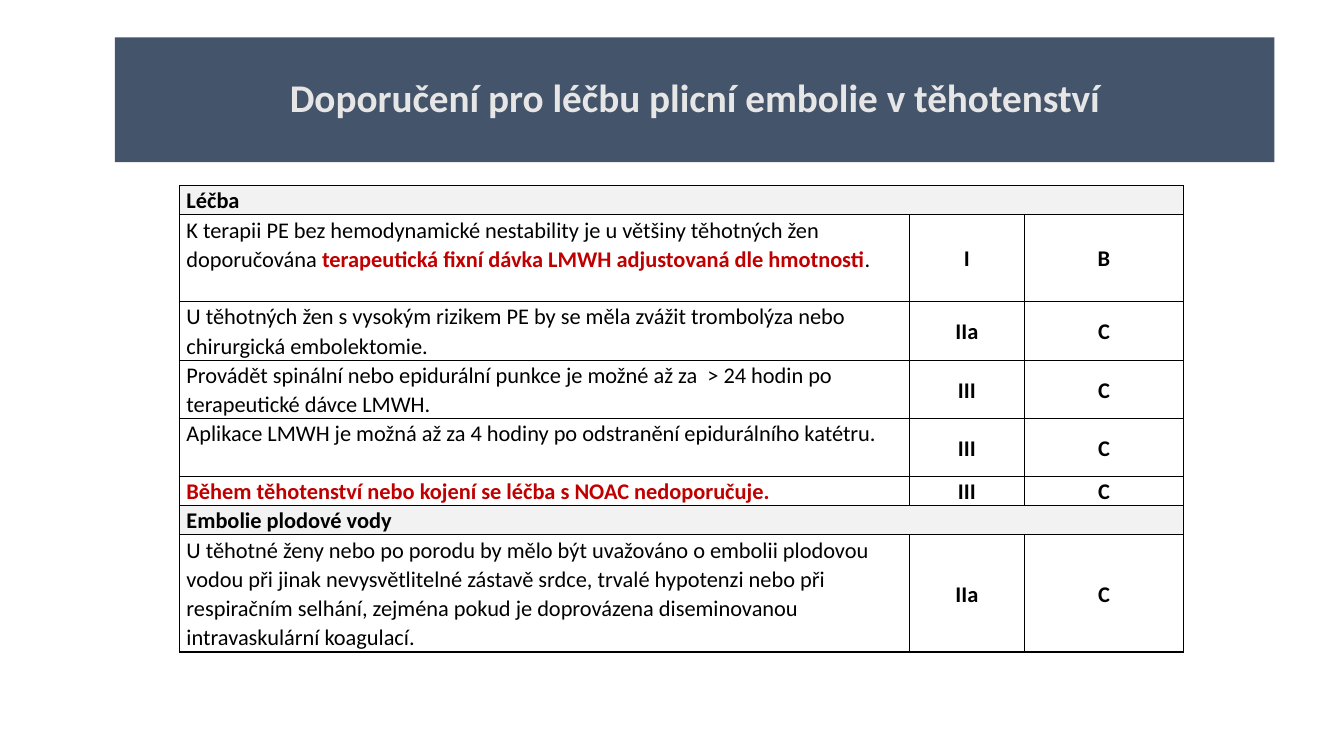
from lxml import etree
from pptx import Presentation
from pptx import util as u
from pptx.dml.color import RGBColor
from pptx.enum import shapes, text
from pptx.oxml import ns

PX = 9144
COLORS = {"banner": "44546A", "title": "E7E6E6", "ink": "000000",
          "accent": "C00000", "section": "F2F2F2"}
COLUMN_WIDTHS = [724, 114, 158]
ROWS = [
    (28, [("Léčba", "ink", True)]),
    (86, [("K terapii PE bez hemodynamické nestability je u většiny těhotných žen doporučována ", "ink", False),
          ("terapeutická fixní dávka LMWH adjustovaná dle hmotnosti", "accent", True),
          (".", "ink", False)], "I", "B"),
    (57, [("U těhotných žen s vysokým rizikem PE by se měla zvážit trombolýza nebo "
           "chirurgická embolektomie.", "ink", False)], "IIa", "C"),
    (57, [("Provádět spinální nebo epidurální punkce je možné až za  > 24 hodin po "
           "terapeutické dávce LMWH.", "ink", False)], "III", "C"),
    (57, [("Aplikace LMWH je možná až za 4 hodiny po odstranění epidurálního katétru.", "ink", False)],
     "III", "C"),
    (28, [("Během těhotenství nebo kojení se léčba s NOAC nedoporučuje.", "accent", True)], "III", "C"),
    (28, [("Embolie plodové vody", "ink", True)]),
    (115, [("U těhotné ženy nebo po porodu by mělo být uvažováno o embolii plodovou vodou při jinak "
            "nevysvětlitelné zástavě srdce, trvalé hypotenzi nebo při respiračním selhání, zejména "
            "pokud je doprovázena diseminovanou intravaskulární koagulací.", "ink", False)], "IIa", "C"),
]


def px(length):
    """Turn whole pixels into EMU."""
    return u.Emu(length * PX)


def paint(fill, color):
    """Apply a solid colour to a fill."""
    fill.solid()
    fill.fore_color.rgb = RGBColor.from_string(COLORS[color])


def write(frame, wording, size=16, color="ink", bold=True, align=text.PP_ALIGN.LEFT, spacing=1.07):
    """Write a string, or a list of (words, colour, bold) parts, as one paragraph."""
    frame.word_wrap = True
    paragraph = frame.paragraphs[0]
    paragraph.alignment = align
    paragraph.line_spacing = spacing
    parts = [(wording, color, bold)] if isinstance(wording, str) else wording
    for words, ink, weight in parts:
        run = paragraph.add_run()
        run.text = words
        run.font.name = "Calibri"
        run.font.size = u.Pt(size)
        run.font.bold = weight
        run.font.color.rgb = RGBColor.from_string(COLORS[ink])


def add_banner(slide, wording):
    """Add the title band."""
    banner = slide.shapes.add_shape(shapes.MSO_SHAPE.RECTANGLE, px(114), px(37), px(1150), px(124))
    banner.shadow.inherit = False
    paint(banner.fill, "banner")
    banner.line.fill.background()
    banner.text_frame.vertical_anchor = text.MSO_ANCHOR.MIDDLE
    write(banner.text_frame, wording, size=28, color="title", align=text.PP_ALIGN.CENTER, spacing=0.9)


def outline(cell):
    """Draw a thin border on all four sides of a cell."""
    properties = cell._tc.get_or_add_tcPr()
    for side in ("a:lnL", "a:lnR", "a:lnT", "a:lnB"):
        border = etree.SubElement(properties, ns.qn(side), w=str(u.Pt(1)))
        solid = etree.SubElement(border, ns.qn("a:solidFill"))
        etree.SubElement(solid, ns.qn("a:srgbClr"), val=COLORS["ink"])


def format_cell(cell, section):
    """Set the margins, border and fill of a cell."""
    cell.margin_left = cell.margin_right = px(7)
    cell.margin_top = cell.margin_bottom = 0
    outline(cell)
    if section:
        paint(cell.fill, "section")
    else:
        cell.fill.background()


def add_recommendations(slide):
    """Add the table of recommendations with class and level."""
    heights = [row[0] for row in ROWS]
    table = slide.shapes.add_table(len(ROWS), len(COLUMN_WIDTHS), px(178), px(184),
                                   px(sum(COLUMN_WIDTHS)), px(sum(heights))).table
    table.first_row = table.horz_banding = False
    for column, width in zip(table.columns, COLUMN_WIDTHS):
        column.width = px(width)
    for index, (height, advice, *grades) in enumerate(ROWS):
        table.rows[index].height = px(height)
        cells = list(table.rows[index].cells)
        for cell in cells:
            format_cell(cell, section=not grades)
        if not grades:
            cells[0].merge(cells[-1])
        write(cells[0].text_frame, advice)
        for cell, grade in zip(cells[1:], grades):
            cell.vertical_anchor = text.MSO_ANCHOR.MIDDLE
            write(cell.text_frame, grade, align=text.PP_ALIGN.CENTER)


def main():
    """Build and save the slide."""
    deck = Presentation()
    deck.slide_width, deck.slide_height = px(1333), px(750)
    slide = deck.slides.add_slide(deck.slide_layouts[6])
    add_banner(slide, "Doporučení pro léčbu plicní embolie v těhotenství")
    add_recommendations(slide)
    deck.save("out.pptx")


if __name__ == "__main__":
    main()
